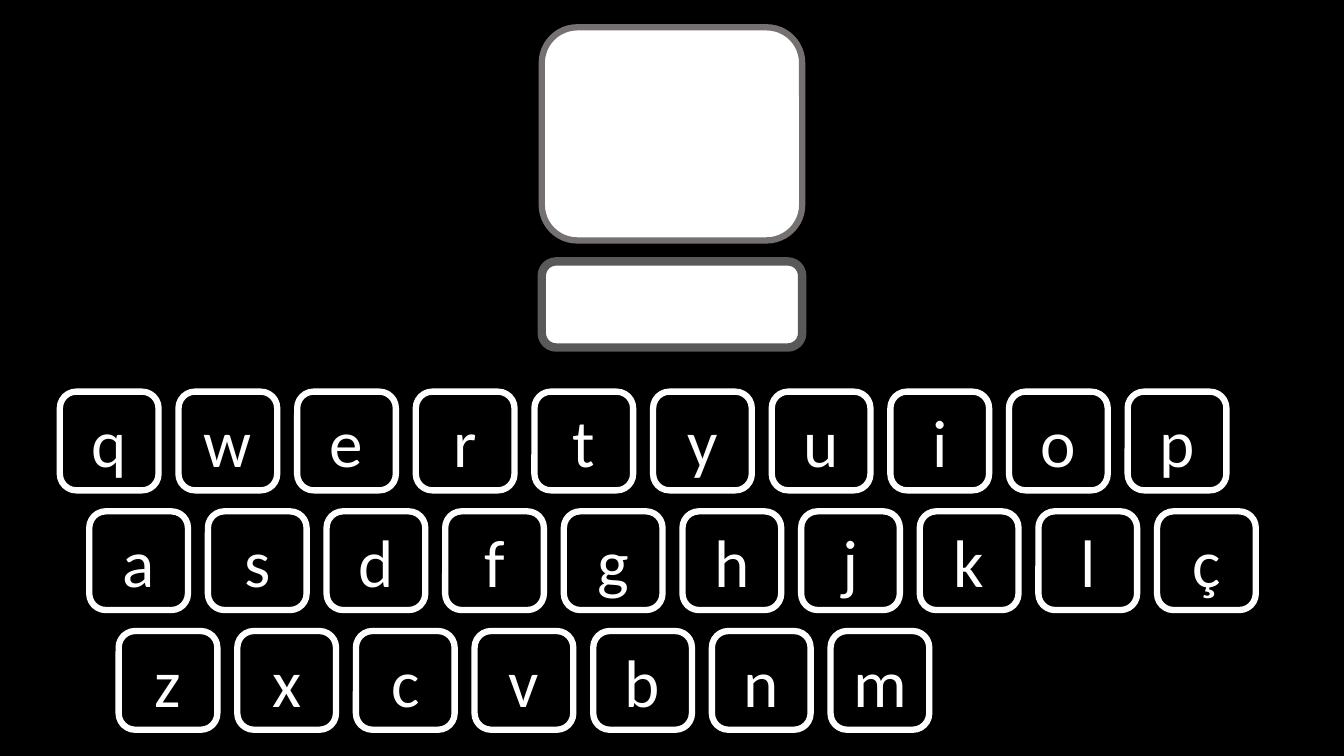
from pptx import Presentation
from pptx.dml.color import RGBColor
from pptx.enum.shapes import MSO_SHAPE as Shape
from pptx.enum.text import MSO_ANCHOR as Anchor, PP_ALIGN as Align
from pptx.util import Pt

PX = 9525  # EMU per px, 96 px to the inch
WIDTH, HEIGHT = 1280, 720
BLACK = RGBColor(0x00, 0x00, 0x00)
WHITE = RGBColor(0xFF, 0xFF, 0xFF)
GRAY = RGBColor(0x76, 0x71, 0x71)
DARK = RGBColor(0x59, 0x59, 0x59)

ROWS = ["qwertyuiop", "asdfghjklç", "zxcvbnm"]
KEY = 94
STEP_X, STEP_Y = 113, 114
SHIFT = 28  # each row starts this much further right


def add_panel(slide, box, fill, edge, weight):
    """Add a rounded rectangle with the given border."""
    panel = slide.shapes.add_shape(Shape.ROUNDED_RECTANGLE, *(n * PX for n in box))
    panel.shadow.inherit = False
    panel.fill.solid()
    panel.fill.fore_color.rgb = fill
    panel.line.color.rgb = edge
    panel.line.width = Pt(weight)
    return panel


def add_key(slide, box, letter):
    frame = add_panel(slide, box, BLACK, WHITE, 4.5).text_frame
    frame.vertical_anchor = Anchor.MIDDLE
    para = frame.paragraphs[0]
    para.alignment = Align.CENTER
    run = para.add_run()
    run.text = letter
    run.font.name = "Calibri"
    run.font.size = Pt(48)
    run.font.color.rgb = WHITE


def add_keyboard(slide, left, top):
    for row, letters in enumerate(ROWS):
        for col, letter in enumerate(letters):
            x = left + row * SHIFT + col * STEP_X
            add_key(slide, (x, top + row * STEP_Y, KEY, KEY), letter)


def add_display(slide, left, top, width):
    """Add the large card and the answer field below it."""
    add_panel(slide, (left, top, width, 203), WHITE, GRAY, 4.5)
    add_panel(slide, (left, top + 223, width, 82), WHITE, DARK, 6)


def main():
    deck = Presentation()
    deck.slide_width, deck.slide_height = WIDTH * PX, HEIGHT * PX
    slide = deck.slides.add_slide(deck.slide_layouts[6])
    back = slide.background.fill
    back.solid()
    back.fore_color.rgb = BLACK
    add_display(slide, 516, 26, 248)
    add_keyboard(slide, 57, 373)
    deck.save("out.pptx")


if __name__ == "__main__":
    main()
